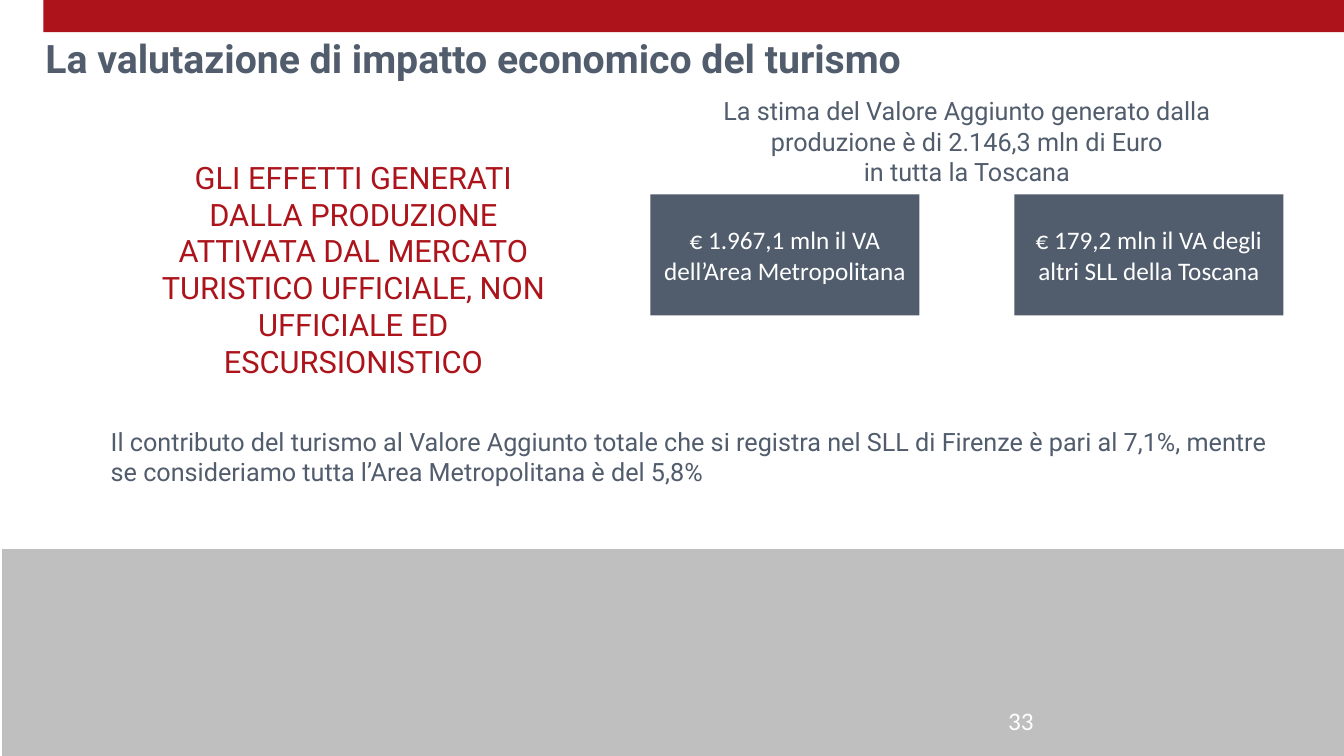
from pptx import Presentation
from pptx.dml.color import RGBColor
from pptx.enum.shapes import MSO_SHAPE as Shape
from pptx.enum.text import MSO_ANCHOR as Anchor, PP_ALIGN as Align
from pptx.oxml.ns import qn
from pptx.util import Emu, Pt

RED, SLATE, GREY, WHITE = "AC131A", "515C6C", "BFBFBF", "FFFFFF"
PLAIN_TABLE = "{2D5ABB26-0587-4C30-8999-92F81FD0307C}"  # no style, no grid


def px(length):
    return Emu(length * 9144)  # 100 px to the inch


def color(value):
    return RGBColor.from_string(value)


class Deck:
    font, size, ink = "Roboto", 18, SLATE

    def __init__(self, width, height):
        self.prs = Presentation()
        self.prs.slide_width, self.prs.slide_height = px(width), px(height)
        self.slide = self.prs.slides.add_slide(self.prs.slide_layouts[6])

    def set_lines(self, frame, lines, align, font=None, size=None, ink=None, bold=False):
        frame.word_wrap = True
        frame.text = "\n".join(lines)
        for paragraph in frame.paragraphs:
            paragraph.alignment = align
            paragraph.font.name = font or self.font
            paragraph.font.size = Pt(size or self.size)
            paragraph.font.color.rgb = color(ink or self.ink)
            paragraph.font.bold = bold

    def text(self, box, *lines, align=Align.LEFT, inset=True, **style):
        frame = self.slide.shapes.add_textbox(*map(px, box)).text_frame
        if not inset:
            frame.margin_left = frame.margin_right = 0
            frame.margin_top = frame.margin_bottom = 0
        self.set_lines(frame, lines, align, **style)

    def block(self, box, fill, *lines):
        block = self.slide.shapes.add_shape(Shape.RECTANGLE, *map(px, box))
        block.shadow.inherit = False
        block.fill.solid()
        block.fill.fore_color.rgb = color(fill)
        block.line.fill.background()
        if lines:
            block.text_frame.vertical_anchor = Anchor.MIDDLE
            self.set_lines(block.text_frame, lines, Align.CENTER, font="Calibri", ink=WHITE)

    def grid(self, box, rows, columns, fill, merges):
        frame = self.slide.shapes.add_table(rows, columns, *map(px, box))
        for style_id in frame.element.iter(qn("a:tableStyleId")):
            style_id.text = PLAIN_TABLE
        table = frame.table
        table.first_row = table.horz_banding = False
        for cell in table.iter_cells():
            cell.fill.solid()
            cell.fill.fore_color.rgb = color(fill)
        for first, last in merges:
            table.cell(*first).merge(table.cell(*last))


def main():
    deck = Deck(1333, 750)

    # Top band and footer grid
    deck.block((43, -3, 1291, 35), RED)
    tall = [((0, column), (1, column)) for column in (3, 4, 8, 9, 12)]
    wide = [((row, column), (row, column + 1))
            for row, column in ((0, 6), (0, 10), (1, 0), (1, 5))]
    deck.grid((2, 545, 1331, 205), 2, 13, GREY, tall + wide)
    deck.text((990, 695, 300, 40), "33", font="Calibri", ink=WHITE)

    # Title and topic
    deck.text((45, 34, 1248, 47), "La valutazione di impatto economico del turismo",
              inset=False, size=28, bold=True)
    deck.text((152, 157, 397, 185),
              "GLI EFFETTI GENERATI DALLA PRODUZIONE ATTIVATA DAL MERCATO "
              "TURISTICO UFFICIALE, NON UFFICIALE ED ESCURSIONISTICO",
              align=Align.CENTER, inset=False, size=22, ink=RED)

    # Added value estimate, split by area
    deck.text((645, 90, 628, 101),
              "La stima del Valore Aggiunto generato dalla produzione è di 2.146,3 mln di Euro",
              "in tutta la Toscana", align=Align.CENTER)
    areas = ("€ 1.967,1 mln il VA dell’Area Metropolitana",
             "€ 179,2 mln il VA degli altri SLL della Toscana")
    for index, area in enumerate(areas):
        deck.block((645 + 361 * index, 193, 267, 120), SLATE, area)

    # Share of total added value
    deck.text((100, 418, 1173, 71),
              "Il contributo del turismo al Valore Aggiunto totale che si registra nel SLL di "
              "Firenze è pari al 7,1%, mentre se consideriamo tutta l’Area Metropolitana è del 5,8%")

    deck.prs.save("out.pptx")


if __name__ == "__main__":
    main()
